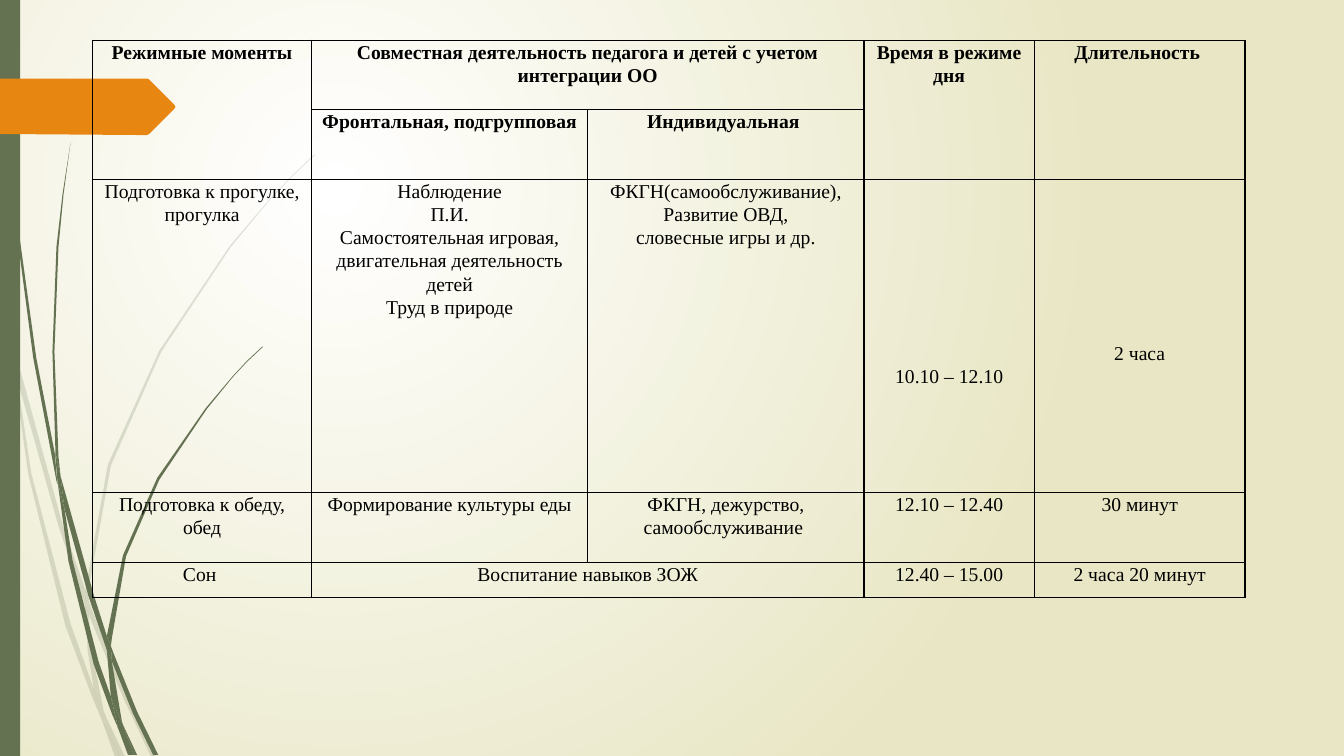
"""Builds a slide with a kindergarten daily routine table over a grass-stalk backdrop."""
from lxml import etree
from pptx import Presentation, util as u
from pptx.dml import color
from pptx.enum import shapes, text
from pptx.oxml import ns, parse_xml

COLORS = {"green": "647252", "orange": "E78712", "white": "FFFFFF", "sand": "E8E6C4", "black": "000000"}


def paint(shape, name):
    """Give a shape a plain fill with no outline or shadow."""
    shape.shadow.inherit = False
    shape.line.fill.background()
    shape.fill.solid()
    shape.fill.fore_color.rgb = color.RGBColor.from_string(COLORS[name])


def outline(points, name):
    """Draw a closed painted outline through points given in inches."""
    corners = [(u.Inches(x), u.Inches(y)) for x, y in points]
    builder = page.shapes.build_freeform(*corners[0])
    builder.add_line_segments(corners[1:])
    shape = builder.convert_to_shape()
    paint(shape, name)
    return shape


deck = Presentation()
deck.slide_width, deck.slide_height = u.Inches(13.33), u.Inches(7.5)
page = deck.slides.add_slide(deck.slide_layouts[6])

backdrop = page.background.fill
backdrop.gradient()
for stop, name, position in zip(backdrop.gradient_stops, ("white", "sand"), (0, 1)):
    stop.color.rgb = color.RGBColor.from_string(COLORS[name])
    stop.position = position
linear = page.background._cSld.find(".//" + ns.qn("a:lin"))
linear.getparent().replace(linear, parse_xml(
    f'<a:path {ns.nsdecls("a")} path="circle">'
    '<a:fillToRect l="50000" t="50000" r="100000" b="100000"/></a:path>'))

pale_blades = [
    [(0.11, 3.5), (0.09, 3.22), (0, 2.82), (0, 2.99), (0.1, 3.44)],
    [(0.58, 5.22), (0.84, 5.99), (0.85, 5.86), (0.62, 5.2), (0.14, 3.45), (0.17, 3.76)],
    [(0.92, 6.07), (0.88, 5.96), (0.88, 6.1), (1.23, 6.94), (1.5, 7.51), (1.55, 7.51), (1.27, 6.92)],
    [(1.19, 7.51), (1.24, 7.51), (1.05, 7.11)],
    [(0.93, 6.83), (0.7, 6.19), (0.31, 4.69), (0.17, 3.76), (0.11, 3.5), (0.28, 4.7), (0.65, 6.21),
     (0.92, 6.93), (1.01, 7.14), (0.99, 7.07)],
    [(0.84, 5.99), (0.87, 6.46), (0.93, 6.83), (0.96, 6.92), (1.05, 7.11), (1.03, 7.06), (0.91, 6.46),
     (0.88, 6.1), (0.88, 6.08)],
    [(0.88, 5.84), (1.1, 4.62), (1.6, 3.49), (2.29, 2.45), (2.68, 1.98), (2.9, 1.75), (3.12, 1.54),
     (3.12, 1.53), (2.89, 1.75), (2.68, 1.97), (2.28, 2.44), (1.58, 3.48), (1.07, 4.61), (0.85, 5.84),
     (0.85, 5.86), (0.88, 5.96)],
    [(1.01, 7.14), (1.14, 7.51), (1.19, 7.51)],
    [(0.88, 6.08), (0.88, 6.1), (0.88, 5.96), (0.85, 5.86), (0.84, 5.99)],
    [(0.96, 6.92), (0.93, 6.83), (0.99, 7.07), (1.01, 7.14), (1.19, 7.51), (1.05, 7.11)],
]
bright_blades = [
    [(0.07, 1.1), (0.17, 2.33), (0.33, 3.55), (0.56, 4.77), (0.57, 4.81), (0.55, 4.57), (0.55, 4.53),
     (0.36, 3.55), (0.19, 2.32), (0.08, 1.09), (0.05, 0.48), (0.04, 0), (0.03, 0), (0.04, 0.48)],
    [(0.88, 5.92), (1.06, 6.45), (1.06, 6.33), (1.06, 6.31), (0.93, 5.9), (0.6, 4.72), (0.64, 5.05)],
    [(1.13, 6.49), (1.1, 6.41), (1.11, 6.56), (1.32, 7.08), (1.52, 7.49), (1.57, 7.49), (1.36, 7.06)],
    [(1.1, 6.91), (0.98, 6.57), (0.72, 5.56), (0.64, 5.05), (0.57, 4.77), (0.68, 5.57), (0.93, 6.59),
     (1.11, 7.08), (1.17, 7.22), (1.16, 7.17)],
    [(0.6, 4.72), (0.58, 4.53), (0.54, 3.49), (0.58, 2.45), (0.63, 1.93), (0.7, 1.41), (0.62, 1.93),
     (0.56, 2.45), (0.52, 3.49), (0.55, 4.49)],
    [(1.33, 7.49), (1.36, 7.49), (1.22, 7.19)],
    [(0.57, 4.77), (0.64, 5.05), (0.6, 4.72), (0.55, 4.49), (0.55, 4.53)],
    [(1.11, 6.33), (1.25, 5.52), (1.58, 4.76), (2.05, 4.06), (2.31, 3.74), (2.45, 3.59), (2.61, 3.44),
     (2.6, 3.44), (2.45, 3.58), (2.31, 3.73), (2.04, 4.05), (1.56, 4.74), (1.22, 5.51), (1.06, 6.31),
     (1.1, 6.41)],
    [(1.17, 7.22), (1.27, 7.49), (1.31, 7.49)],
    [(1.06, 6.45), (1.1, 6.91), (1.16, 7.06), (1.22, 7.19), (1.21, 7.16), (1.11, 6.56), (1.09, 6.51)],
    [(1.06, 6.45), (1.09, 6.51), (1.11, 6.56), (1.1, 6.41), (1.06, 6.31), (1.06, 6.33)],
    [(1.16, 7.06), (1.1, 6.91), (1.16, 7.17), (1.17, 7.22), (1.3, 7.49), (1.33, 7.49), (1.22, 7.19)],
]
for blade in pale_blades:
    tint = outline(blade, "green")._element.spPr.find(ns.qn("a:solidFill"))[0]
    etree.SubElement(tint, ns.qn("a:alpha"), val="20000")
for blade in bright_blades:
    outline(blade, "green")

stripe = page.shapes.add_shape(shapes.MSO_SHAPE.RECTANGLE, 0, 0, u.Inches(0.2), deck.slide_height)
paint(stripe, "green")
outline([(0, 0.78), (1.46, 0.78), (1.48, 0.79), (1.73, 1.04), (1.74, 1.06), (1.73, 1.08),
         (1.48, 1.33), (1.46, 1.34), (1.36, 1.34), (0, 1.33)], "orange")

rows = [
    ["Режимные моменты", "Совместная деятельность педагога и детей с учетом интеграции ОО", "",
     "Время в режиме дня", "Длительность "],
    ["", "Фронтальная, подгрупповая", "Индивидуальная ", "", ""],
    ["Подготовка к прогулке, прогулка",
     "Наблюдение\nП.И.\nСамостоятельная игровая, двигательная деятельность детей\nТруд в природе",
     "ФКГН(самообслуживание),\nРазвитие ОВД,\nсловесные игры и др.", "10.10 – 12.10", "2 часа"],
    ["Подготовка к обеду, обед", "Формирование культуры еды", "ФКГН, дежурство,\nсамообслуживание ",
     "12.10 – 12.40", "30 минут"],
    ["Сон ", "Воспитание навыков ЗОЖ", "", "12.40 – 15.00", "2 часа 20 минут"],
]
widths = [2.17, 2.74, 2.74, 1.69, 2.09]
heights = [0.69, 0.69, 3.11, 0.69, 0.35]
merges = [((0, 0), (1, 0)), ((0, 1), (0, 2)), ((0, 3), (1, 3)), ((0, 4), (1, 4)), ((4, 1), (4, 2))]
top_margins = {(2, 3): 1.84, (2, 4): 1.61}

table = page.shapes.add_table(len(rows), len(widths), u.Inches(0.92), u.Inches(0.4),
                              u.Inches(sum(widths)), u.Inches(sum(heights))).table
table.first_row = table.horz_banding = False
for column, width in zip(table.columns, widths):
    column.width = u.Inches(width)
for row, height in zip(table.rows, heights):
    row.height = u.Inches(height)
for start, end in merges:
    table.cell(*start).merge(table.cell(*end))

for r, row in enumerate(rows):
    for c, wording in enumerate(row):
        cell = table.cell(r, c)
        margins = {"margin_left": 0.07, "margin_right": 0.07,
                   "margin_top": top_margins.get((r, c), 0), "margin_bottom": 0}
        for name, value in margins.items():
            setattr(cell, name, u.Inches(value))
        cell.fill.background()
        for place, side in enumerate(("lnL", "lnR", "lnT", "lnB")):
            cell._tc.tcPr.insert(place, parse_xml(
                f'<a:{side} {ns.nsdecls("a")} w="12700"><a:solidFill>'
                f'<a:srgbClr val="{COLORS["black"]}"/></a:solidFill></a:{side}>'))
        if not wording:
            continue
        cell.text = wording
        for para in cell.text_frame.paragraphs:
            para.alignment = text.PP_ALIGN.CENTER
            para.line_spacing = 1.07
            for span in para.runs:
                style = {"name": "Times New Roman", "size": u.Pt(14), "bold": r < 2}
                for name, value in style.items():
                    setattr(span.font, name, value)
                span.font.color.rgb = color.RGBColor.from_string(COLORS["black"])

deck.save("out.pptx")
